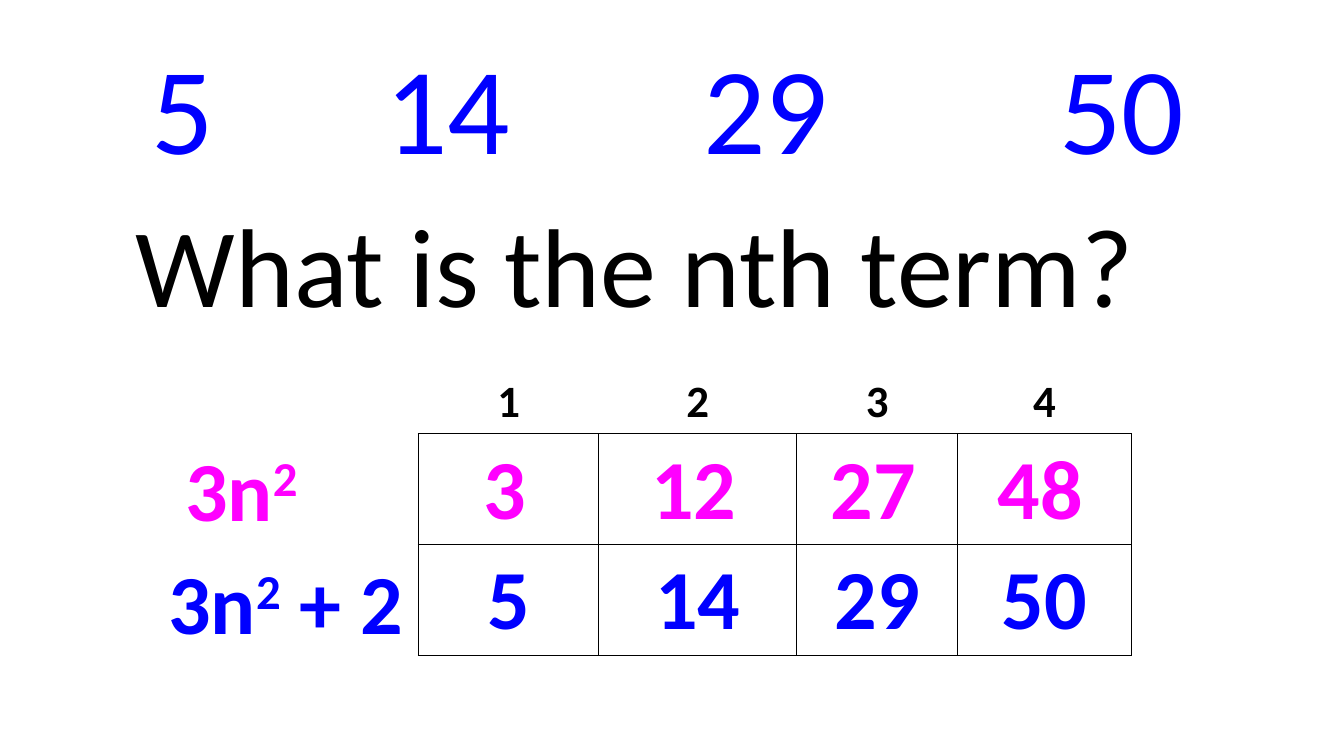
from dataclasses import dataclass
from typing import Optional

from lxml.etree import SubElement
from pptx import Presentation
from pptx.dml.color import RGBColor
from pptx.enum.text import MSO_ANCHOR as Anchor, MSO_AUTO_SIZE as AutoSize, PP_ALIGN as Align
from pptx.oxml.ns import qn
from pptx.util import Inches, Pt


@dataclass(frozen=True)
class Theme:
    font: str = "Calibri"
    sequence: str = "0000FF"
    square: str = "FF00FF"
    ink: str = "000000"
    paper: str = "FFFFFF"
    terms_size: int = 88
    question_size: int = 80
    value_size: int = 60
    position_size: int = 32


@dataclass(frozen=True)
class Style:
    size: int
    color: str
    bold: bool = True


@dataclass(frozen=True)
class Grid:
    left: float
    top: float
    columns: tuple[float, ...]
    row_heights: tuple[float, ...]
    rows: tuple[tuple[str, ...], ...]
    style: Style
    borders: tuple[Optional[str], ...]  # one colour per row
    anchor: Anchor = Anchor.TOP
    tight: bool = False


@dataclass(frozen=True)
class Formula:
    box: tuple[float, float, float, float]
    pieces: tuple[tuple[str, int], ...]  # text and raised percentage
    style: Style
    align: Align


THEME = Theme()
TERMS = ("5", "14", "29", "50")
TERM_COLUMNS = (2.11, 0.89, 1.36, 1.42, 2.11, 1.42, 2.11)
WORKING_COLUMNS = (1.79, 1.96, 1.6, 1.72)
SEQUENCE = Style(THEME.value_size, THEME.sequence)
SQUARE = Style(THEME.value_size, THEME.square)

GRIDS = (
    # Sequence along the top, with spacer columns between the terms
    Grid(0.76, 0.36, TERM_COLUMNS, (1.48,),
         (tuple(TERMS[i // 2] if i % 2 == 0 else "" for i in range(7)),),
         Style(THEME.terms_size, THEME.sequence, False), (THEME.paper,),
         Anchor.BOTTOM, tight=True),
    # Position numbers above an outlined row
    Grid(4.15, 3.67, WORKING_COLUMNS, (0.63, 1.1), (("1", "2", "3", "4"), ("",) * 4),
         Style(THEME.position_size, THEME.ink), (None, THEME.ink)),
    # Terms of the sequence
    Grid(4.15, 5.4, WORKING_COLUMNS, (1.1,), (TERMS,), SEQUENCE, (THEME.ink,)),
    # Values of the squared part, laid over the outlined row
    Grid(4.11, 4.31, WORKING_COLUMNS, (1.1,), (("3", "12", "27", "48"),),
         SQUARE, (None,), Anchor.MIDDLE),
)

FORMULAS = (
    Formula((1.54, 5.41, 2.59, 1.11), (("3n", 0), ("2", 30), (" + 2", 0)),
            SEQUENCE, Align.CENTER),
    Formula((1.69, 4.29, 1.36, 1.11), (("3n", 0), ("2", 30)), SQUARE, Align.RIGHT),
)


def add_run(paragraph, text: str, style: Style, raised: int = 0) -> None:
    run = paragraph.add_run()
    run.text = text
    run.font.name = THEME.font
    run.font.size = Pt(style.size)
    run.font.bold = style.bold
    run.font.color.rgb = RGBColor.from_string(style.color)
    if raised:
        run.font._element.set("baseline", str(raised * 1000))


def set_borders(cell, color: Optional[str]) -> None:
    properties = cell._tc.get_or_add_tcPr()
    for side in "LRTB":
        line = SubElement(properties, qn(f"a:ln{side}"), w=str(Pt(1)))
        if color:
            fill = SubElement(line, qn("a:solidFill"))
            SubElement(fill, qn("a:srgbClr"), val=color)
        else:
            SubElement(line, qn("a:noFill"))


def add_grid(slide, grid: Grid) -> None:
    table = slide.shapes.add_table(
        len(grid.rows), len(grid.columns), Inches(grid.left), Inches(grid.top),
        Inches(sum(grid.columns)), Inches(sum(grid.row_heights))).table
    table.first_row = table.horz_banding = False
    for column, width in zip(table.columns, grid.columns):
        column.width = Inches(width)
    for row, height, values, border in zip(
            table.rows, grid.row_heights, grid.rows, grid.borders):
        row.height = Inches(height)
        for cell, value in zip(row.cells, values):
            set_borders(cell, border)
            cell.fill.background()
            cell.vertical_anchor = grid.anchor
            if grid.tight:
                cell.margin_left = cell.margin_right = cell.margin_top = Inches(0.01)
                cell.margin_bottom = 0
            if value:
                paragraph = cell.text_frame.paragraphs[0]
                paragraph.alignment = Align.CENTER
                add_run(paragraph, value, grid.style)


def add_formula(slide, formula: Formula) -> None:
    frame = slide.shapes.add_textbox(*map(Inches, formula.box)).text_frame
    frame.word_wrap = False
    frame.auto_size = AutoSize.SHAPE_TO_FIT_TEXT
    paragraph = frame.paragraphs[0]
    paragraph.alignment = formula.align
    for text, raised in formula.pieces:
        add_run(paragraph, text, formula.style, raised)


def add_question(slide) -> None:
    question = slide.shapes.title
    question.left, question.top, question.width, question.height = map(
        Inches, (0.6, 1.89, 11.65, 1.45))
    frame = question.text_frame
    frame.word_wrap = True
    frame.auto_size = AutoSize.SHAPE_TO_FIT_TEXT
    frame.vertical_anchor = Anchor.TOP
    paragraph = frame.paragraphs[0]
    paragraph.alignment = Align.CENTER
    add_run(paragraph, "What is the nth term? ",
            Style(THEME.question_size, THEME.ink, False))


def main() -> None:
    deck = Presentation()
    deck.slide_width, deck.slide_height = Inches(13.33), Inches(7.5)
    slide = deck.slides.add_slide(deck.slide_layouts.get_by_name("Title Only"))
    add_question(slide)
    for grid in GRIDS:
        add_grid(slide, grid)
    for formula in FORMULAS:
        add_formula(slide, formula)
    deck.save("out.pptx")


if __name__ == "__main__":
    main()
